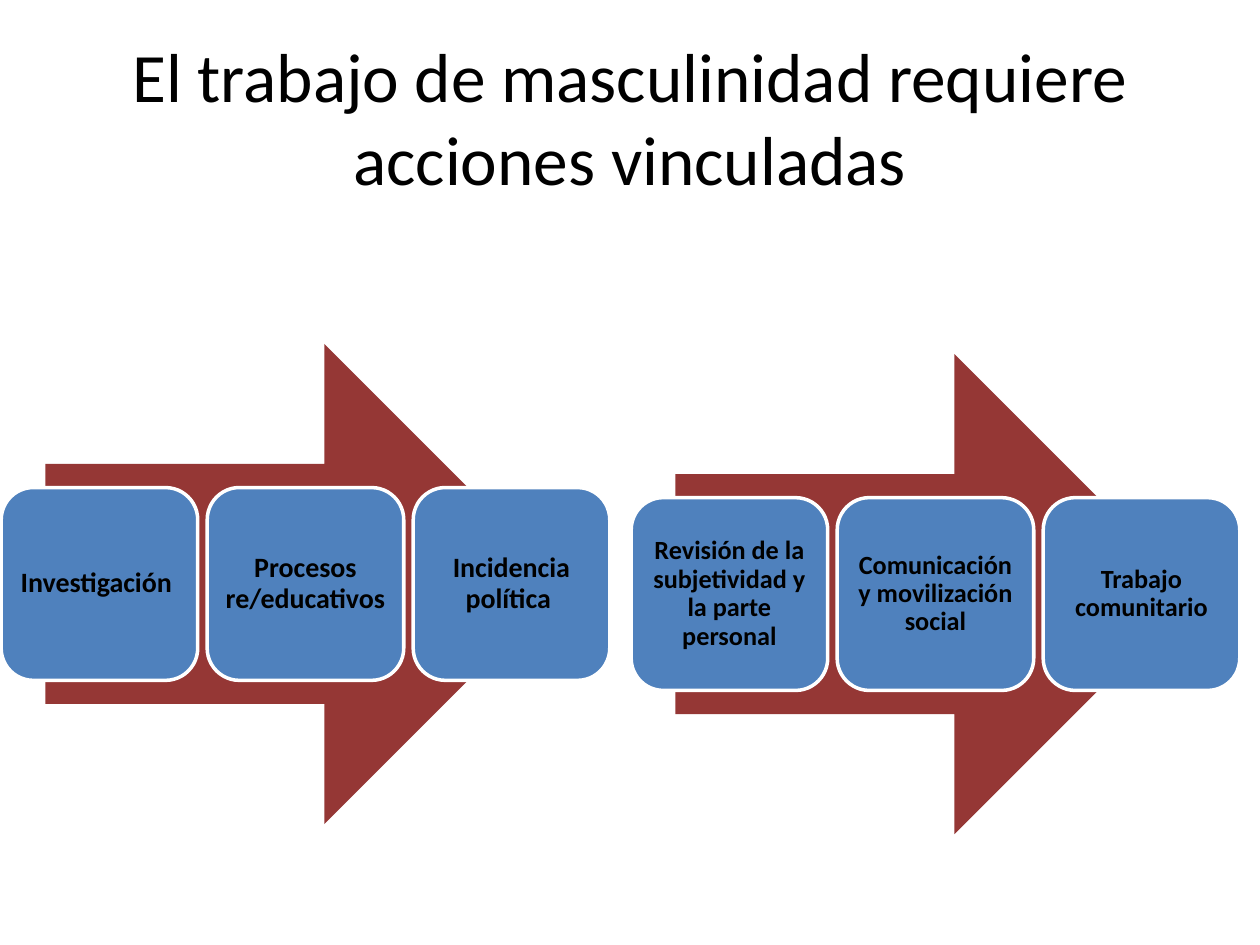
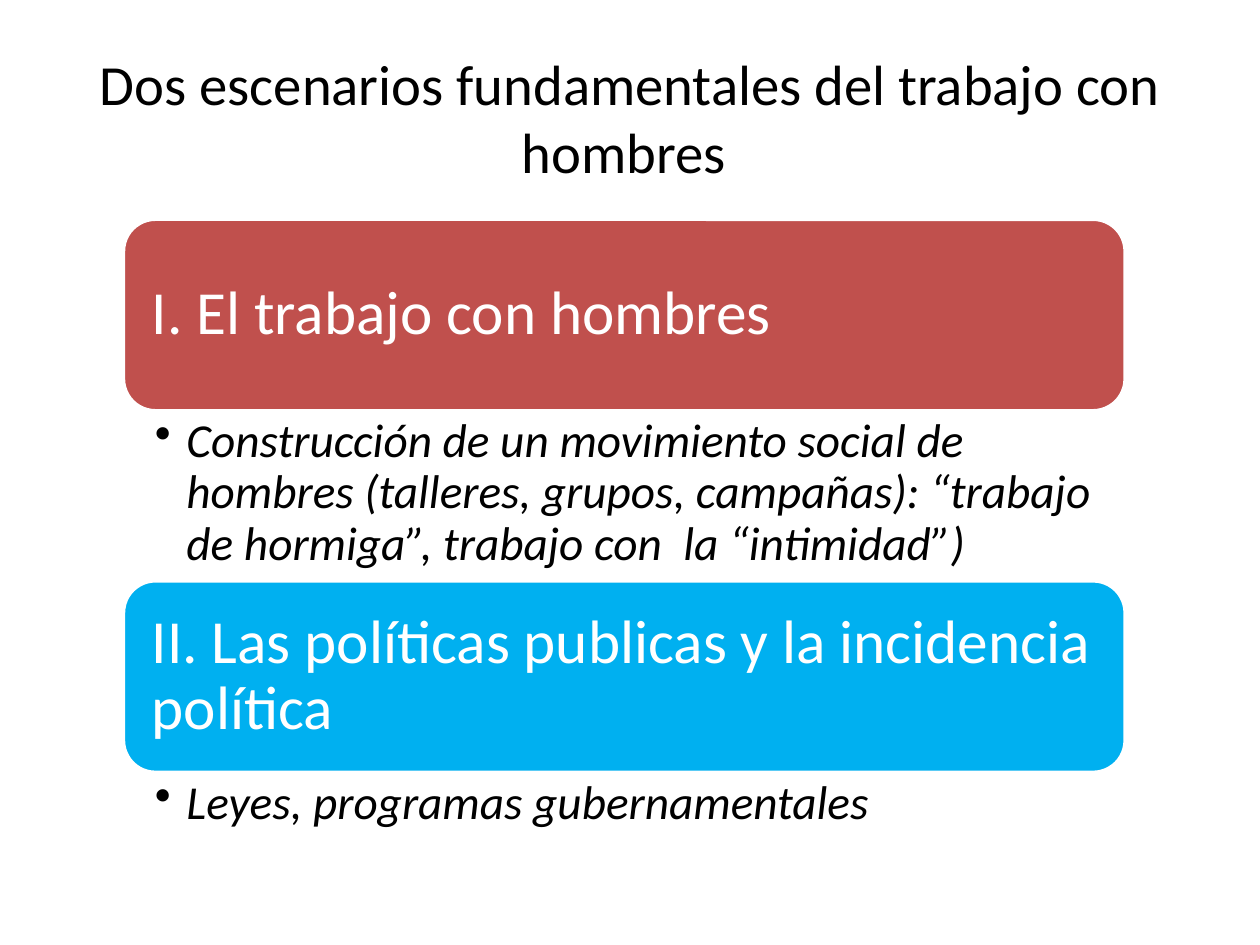
from dataclasses import dataclass

from lxml.etree import SubElement
from pptx import Presentation
from pptx.dml.color import RGBColor
from pptx.enum.shapes import MSO_SHAPE
from pptx.enum.text import MSO_ANCHOR, PP_ALIGN
from pptx.oxml.ns import qn
from pptx.util import Inches, Pt


@dataclass(frozen=True)
class Theme:
    font: str = "Calibri"
    black: str = "000000"
    white: str = "FFFFFF"
    arrow: str = "953735"
    step: str = "4F81BD"
    red: str = "C0504D"
    cyan: str = "00B0F0"
    large_title: float = 39.6
    small_title: float = 32.4
    heading: float = 35
    detail: float = 27
    outline: float = 2


THEME = Theme()

ACTIONS_TITLE = "El trabajo de masculinidad requiere acciones vinculadas"
ACTION_GROUPS = [
    {"left": 0.01, "top": 2.73, "size": 16, "inset": 0.07,
     "steps": ["Investigación ", "Procesos re/educativos ", "Incidencia política "]},
    {"left": 5.01, "top": 2.81, "size": 15, "inset": 0.06,
     "steps": ["Revisión de la subjetividad y la parte personal",
               "Comunicación y movilización social",
               "Trabajo comunitario"]},
]

SCENARIOS_TITLE = "Dos escenarios fundamentales del trabajo con hombres "
SCENARIOS = [
    {"heading": "I. El trabajo con hombres", "color": THEME.red, "detail_height": 1.35,
     "detail": "Construcción de un movimiento social de hombres (talleres, grupos, "
               "campañas): “trabajo de hormiga”, trabajo con  la “intimidad”)"},
    {"heading": "II. Las políticas publicas y la incidencia política",
     "color": THEME.cyan, "detail_height": 0.63,
     "detail": "Leyes, programas gubernamentales"},
]

ARROW_WIDTH, ARROW_HEIGHT, ARROW_INDENT = 4.12, 3.81, 0.35
STEP_WIDTH, STEP_HEIGHT, STEP_PITCH = 1.56, 1.53, 1.635
SCENARIO_LEFT, SCENARIO_TOP, SCENARIO_WIDTH, HEADING_HEIGHT = 0.98, 1.74, 7.95, 1.52


def write_text(box, text, size, color=THEME.black, bold=False, italic=False,
               align=PP_ALIGN.CENTER, anchor=MSO_ANCHOR.MIDDLE,
               insets=(0.1, 0.05, 0.1, 0.05), spacing=0.9, bullet=None):
    frame = box.text_frame
    frame.word_wrap = True
    frame.vertical_anchor = anchor
    (frame.margin_left, frame.margin_top,
     frame.margin_right, frame.margin_bottom) = map(Inches, insets)
    para = frame.paragraphs[0]
    if bullet:
        properties = para._p.get_or_add_pPr()
        properties.set("marL", str(Inches(0.25)))
        properties.set("indent", str(Inches(-0.25)))
        SubElement(properties, qn("a:buChar")).set("char", bullet)
    para.alignment = align
    para.line_spacing = spacing
    span = para.add_run()
    span.text = text
    span.font.name = THEME.font
    span.font.size = Pt(size)
    span.font.bold = bold
    span.font.italic = italic
    span.font.color.rgb = RGBColor.from_string(color)


def add_block(page, kind, left, top, width, height, fill, outline=None):
    shape = page.shapes.add_shape(kind, *map(Inches, (left, top, width, height)))
    shape.shadow.inherit = False
    shape.fill.solid()
    shape.fill.fore_color.rgb = RGBColor.from_string(fill)
    if outline:
        shape.line.color.rgb = RGBColor.from_string(outline)
        shape.line.width = Pt(THEME.outline)
    else:
        shape.line.fill.background()
    return shape


def add_text_box(page, left, top, width, height, text, **style):
    box = page.shapes.add_textbox(*map(Inches, (left, top, width, height)))
    write_text(box, text, **style)


def add_page(deck, title, size):
    page = deck.slides.add_slide(deck.slide_layouts[6])
    add_text_box(page, 0.5, 0.3, 9, 1.25, title, size=size, spacing=1.0)
    return page


def draw_action_group(page, group):
    add_block(page, MSO_SHAPE.RIGHT_ARROW, group["left"] + ARROW_INDENT, group["top"],
              ARROW_WIDTH, ARROW_HEIGHT, THEME.arrow)
    step_top = group["top"] + (ARROW_HEIGHT - STEP_HEIGHT) / 2
    for index, step in enumerate(group["steps"]):
        box = add_block(page, MSO_SHAPE.ROUNDED_RECTANGLE,
                        group["left"] + index * STEP_PITCH, step_top,
                        STEP_WIDTH, STEP_HEIGHT, THEME.step, THEME.white)
        write_text(box, step, group["size"], bold=True, insets=(group["inset"],) * 4)


def draw_scenarios(page):
    top = SCENARIO_TOP
    for scenario in SCENARIOS:
        band = add_block(page, MSO_SHAPE.ROUNDED_RECTANGLE, SCENARIO_LEFT, top,
                         SCENARIO_WIDTH, HEADING_HEIGHT, scenario["color"], THEME.white)
        write_text(band, scenario["heading"], THEME.heading, color=THEME.white,
                   align=PP_ALIGN.LEFT, insets=(0.15,) * 4)
        top += HEADING_HEIGHT
        add_text_box(page, SCENARIO_LEFT, top, SCENARIO_WIDTH, scenario["detail_height"],
                     scenario["detail"], size=THEME.detail, italic=True,
                     align=PP_ALIGN.LEFT, anchor=MSO_ANCHOR.TOP,
                     insets=(0.25, 0.05, 0.27, 0.05), bullet="•")
        top += scenario["detail_height"]


def main():
    deck = Presentation()
    deck.slide_width, deck.slide_height = Inches(10), Inches(7.5)
    actions_page = add_page(deck, ACTIONS_TITLE, THEME.large_title)
    for group in ACTION_GROUPS:
        draw_action_group(actions_page, group)
    draw_scenarios(add_page(deck, SCENARIOS_TITLE, THEME.small_title))
    deck.save("out.pptx")


if __name__ == "__main__":
    main()
